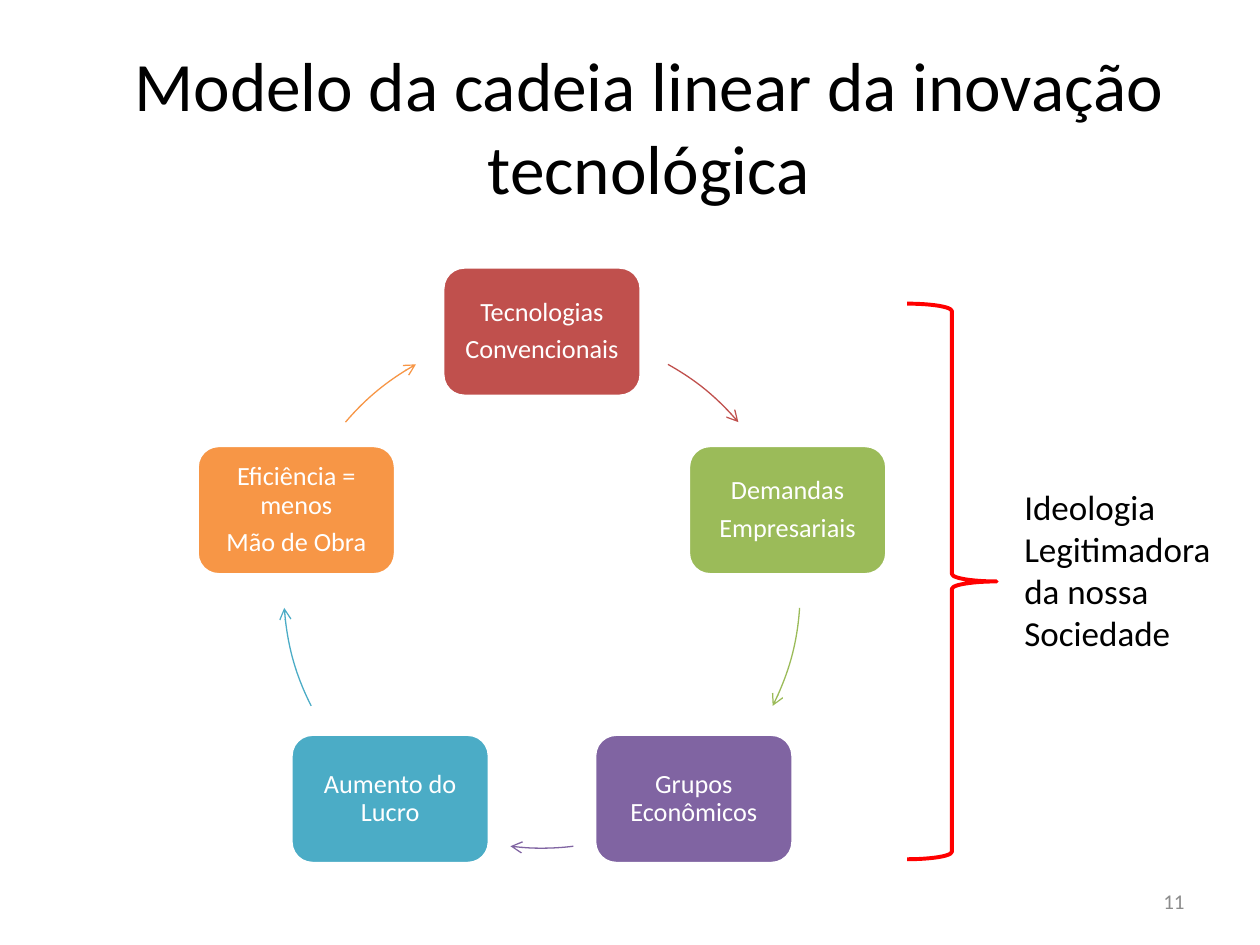
from dataclasses import dataclass
from math import cos, radians, sin

from lxml import etree
from pptx import Presentation
from pptx.dml.color import RGBColor
from pptx.enum.shapes import MSO_SHAPE
from pptx.enum.text import MSO_ANCHOR, MSO_AUTO_SIZE, PP_ALIGN
from pptx.oxml.ns import qn
from pptx.util import Pt

ROUNDED, ARC, BRACE = MSO_SHAPE.ROUNDED_RECTANGLE, MSO_SHAPE.ARC, MSO_SHAPE.RIGHT_BRACE
MIDDLE, TOP = MSO_ANCHOR.MIDDLE, MSO_ANCHOR.TOP
LEFT, CENTER, RIGHT = PP_ALIGN.LEFT, PP_ALIGN.CENTER, PP_ALIGN.RIGHT
NO_FIT = MSO_AUTO_SIZE.NONE

FONT = "Calibri"
COLORS = {
    "red": "C0504D", "green": "9BBB59", "purple": "8064A2", "blue": "4BACC6",
    "orange": "F79646", "brace": "FF0000", "black": "000000", "white": "FFFFFF",
    "gray": "8C8C8C",
}
CENTER_X, CENTER_Y, RADIUS = 309.7, 337.1, 147.6
NODE_WIDTH, NODE_HEIGHT = 113.4, 73.9


@dataclass
class Stage:
    lines: list[str]
    color: str
    arrow_start: float
    arrow_end: float


@dataclass
class TextStyle:
    size: float
    color: str
    align: PP_ALIGN
    anchor: MSO_ANCHOR


STAGES = [
    Stage(["Tecnologias", "Convencionais"], "red", 29.2, 49.5),
    Stage(["Demandas", "Empresariais"], "green", 94, 116.7),
    Stage(["Grupos Econômicos"], "purple", 173, 187),
    Stage(["Aumento do Lucro"], "blue", 243.3, 266),
    Stage(["Eficiência = menos", "Mão de Obra"], "orange", 310.5, 330.8),
]
TITLE_STYLE = TextStyle(39.6, "black", CENTER, MIDDLE)
NODE_STYLE = TextStyle(15, "white", CENTER, MIDDLE)
IDEOLOGY_STYLE = TextStyle(20, "black", LEFT, TOP)
NUMBER_STYLE = TextStyle(12, "gray", RIGHT, MIDDLE)


def rgb(name: str) -> RGBColor:
    return RGBColor.from_string(COLORS[name])


def apply(target, values: dict) -> None:
    for name, value in values.items():
        setattr(target, name, value)


def place(shape, left: float, top: float, width: float, height: float) -> None:
    apply(shape, {"left": Pt(left), "top": Pt(top), "width": Pt(width), "height": Pt(height)})


def write(shape, lines: list[str], style: TextStyle, para_format: dict | None = None) -> None:
    frame = shape.text_frame
    apply(frame, {"word_wrap": True, "auto_size": NO_FIT, "vertical_anchor": style.anchor})
    for index, line in enumerate(lines):
        para = frame.add_paragraph() if index else frame.paragraphs[0]
        apply(para, {"alignment": style.align, **(para_format or {})})
        span = para.add_run()
        span.text = line
        apply(span.font, {"name": FONT, "size": Pt(style.size)})
        span.font.color.rgb = rgb(style.color)


def add_text(page, box: tuple, text: str, style: TextStyle) -> None:
    write(page.shapes.add_textbox(*map(Pt, box)), [text], style)


def add_outline(page, preset: MSO_SHAPE, box: tuple, color: str, weight: float):
    shape = page.shapes.add_shape(preset, *map(Pt, box))
    shape.shadow.inherit = False
    shape.fill.background()
    shape.line.color.rgb = rgb(color)
    shape.line.width = Pt(weight)
    return shape


def add_node(page, stage: Stage, angle: float) -> None:
    left = CENTER_X + RADIUS * sin(radians(angle)) - NODE_WIDTH / 2
    top = CENTER_Y - RADIUS * cos(radians(angle)) - NODE_HEIGHT / 2
    node = add_outline(page, ROUNDED, (left, top, NODE_WIDTH, NODE_HEIGHT), "white", 2)
    node.fill.solid()
    node.fill.fore_color.rgb = rgb(stage.color)
    margins = ("margin_left", "margin_right", "margin_top", "margin_bottom")
    apply(node.text_frame, dict.fromkeys(margins, Pt(1)))
    write(node, stage.lines, NODE_STYLE, {"line_spacing": 0.9, "space_after": Pt(5.25)})


def add_arrow(page, stage: Stage) -> None:
    box = (CENTER_X - RADIUS, CENTER_Y - RADIUS, 2 * RADIUS, 2 * RADIUS)
    arrow = add_outline(page, ARC, box, stage.color, 0.75)
    for index, angle in enumerate((stage.arrow_start, stage.arrow_end)):
        arrow.adjustments[index] = (angle - 90) % 360 * 0.6
    line = arrow.line._get_or_add_ln()
    etree.SubElement(line, qn("a:tailEnd"), type="arrow")


def main() -> None:
    deck = Presentation()
    apply(deck, {"slide_width": Pt(720), "slide_height": Pt(540)})
    page = deck.slides.add_slide(deck.slide_layouts[5])
    title = page.shapes.title
    place(title, 46.8, 26.6, 648, 90)
    write(title, ["Modelo da cadeia linear da inovação tecnológica"], TITLE_STYLE)

    for index, stage in enumerate(STAGES):
        add_node(page, stage, index * 360 / len(STAGES))
        add_arrow(page, stage)

    add_outline(page, BRACE, (518.4, 173.5, 51.1, 317.5), "brace", 2.25)
    add_text(page, (578.2, 273.6, 133.2, 104.4),
             "Ideologia Legitimadora da nossa Sociedade", IDEOLOGY_STYLE)
    add_text(page, (516.2, 500.4, 167.8, 28.8), "11", NUMBER_STYLE)
    deck.save("out.pptx")


if __name__ == "__main__":
    main()
